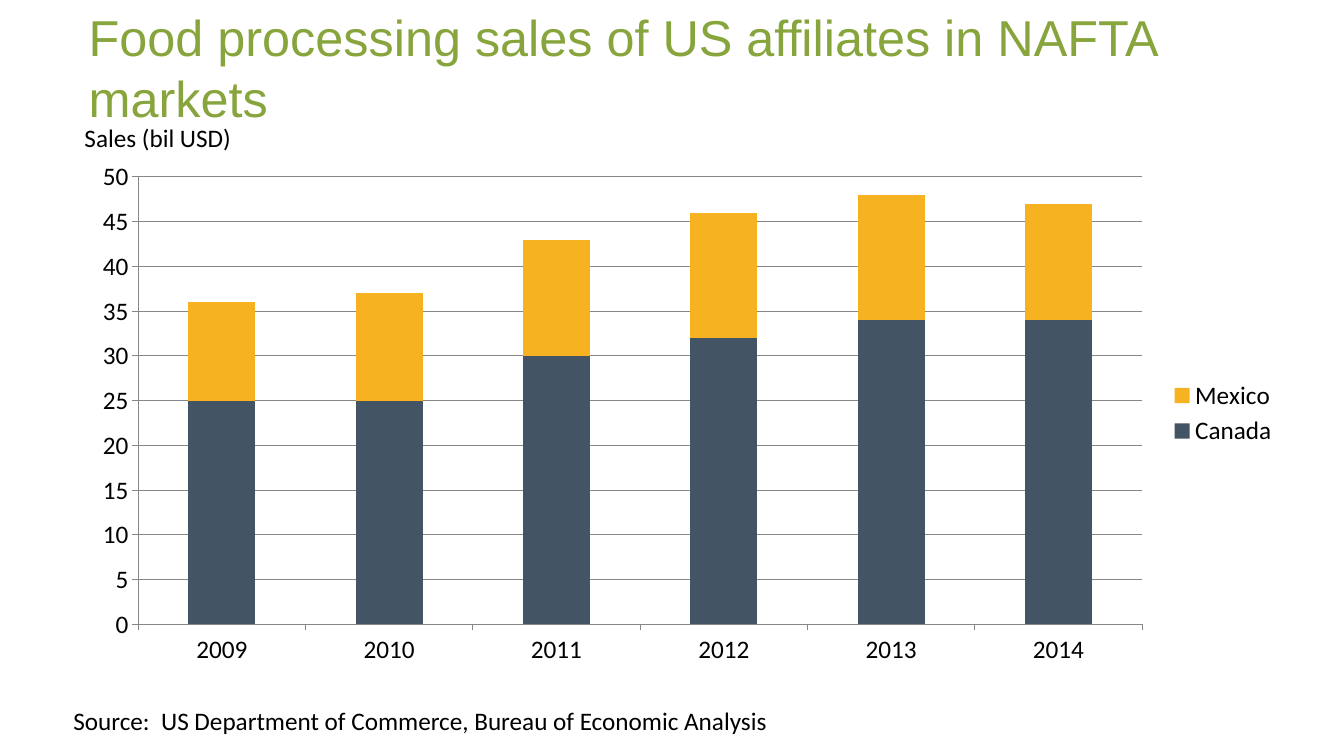
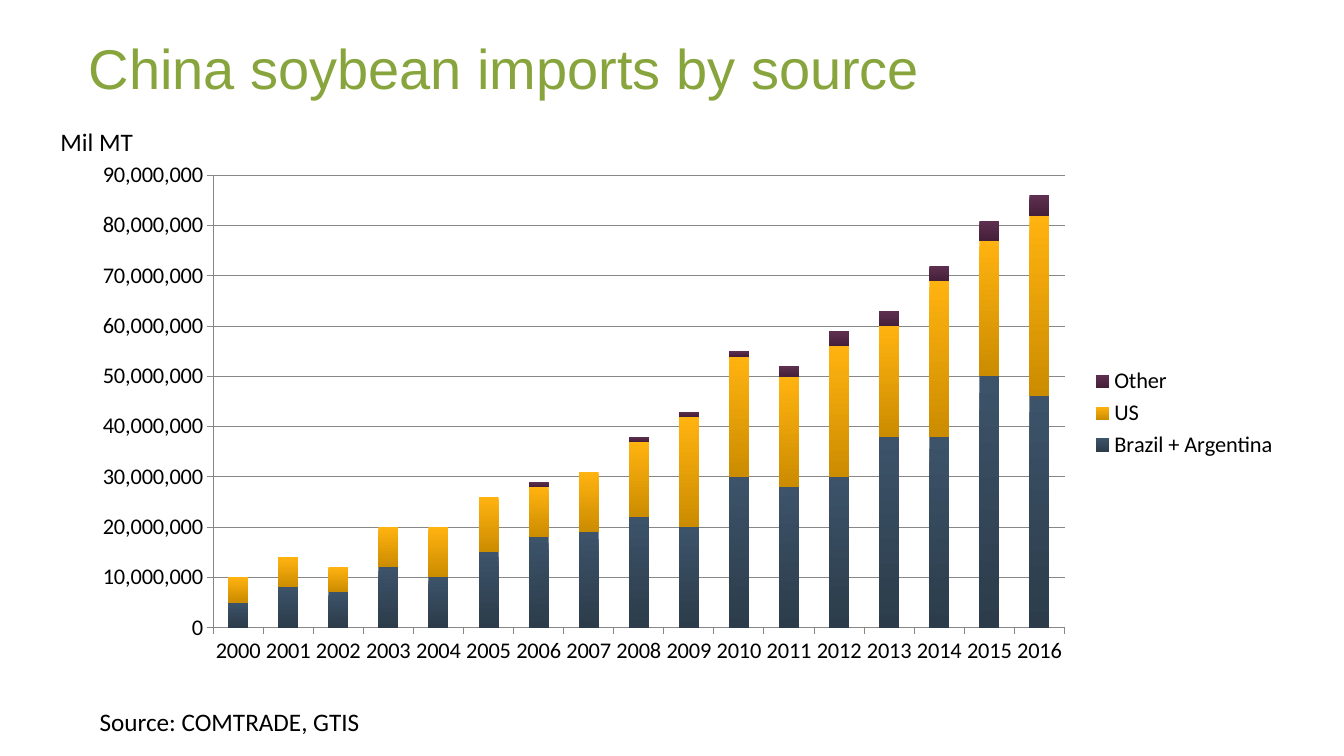
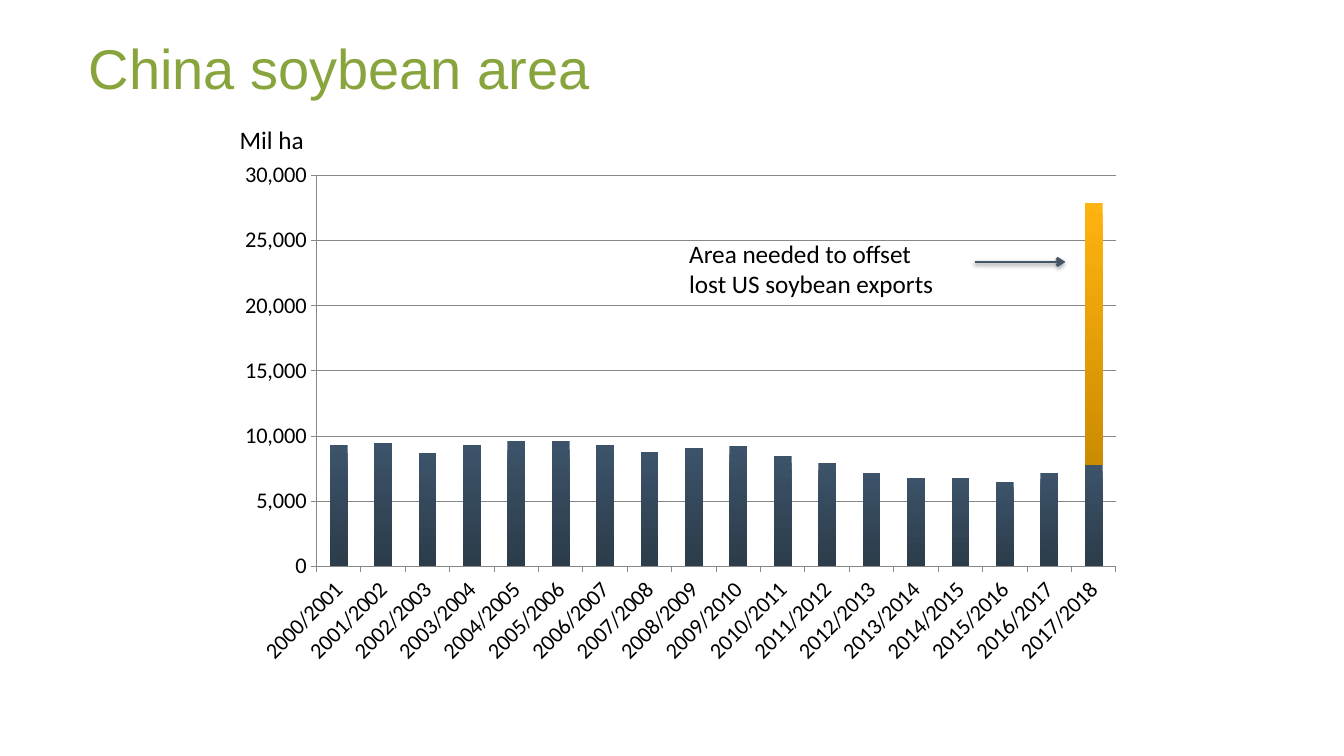
from lxml import etree
from pptx import Presentation
from pptx.chart.data import CategoryChartData
from pptx.dml.color import RGBColor
from pptx.enum.chart import XL_CHART_TYPE, XL_LEGEND_POSITION, XL_TICK_MARK
from pptx.enum.shapes import MSO_CONNECTOR
from pptx.enum.text import MSO_ANCHOR, MSO_AUTO_SIZE, PP_ALIGN
from pptx.oxml import parse_xml
from pptx.oxml.ns import nsdecls, qn
from pptx.util import Cm, Pt

STACKED = XL_CHART_TYPE.COLUMN_STACKED
LEGEND_RIGHT = XL_LEGEND_POSITION.RIGHT
TICK_OUT = XL_TICK_MARK.OUTSIDE
STRAIGHT = MSO_CONNECTOR.STRAIGHT
MIDDLE = MSO_ANCHOR.MIDDLE
LEFT = PP_ALIGN.LEFT
NO_FIT, GROW = MSO_AUTO_SIZE.NONE, MSO_AUTO_SIZE.SHAPE_TO_FIT_TEXT

COLOURS = {
    "title": "88A53D", "text": "000000", "grid": "878787",
    "slate": "435464", "amber": "F6B221",
    "slate top": "3C5369", "slate base": "2C3C4A",
    "amber top": "FFB310", "amber base": "CC8C00",
    "plum top": "5F2F50", "plum base": "45203A",
}
TITLE_AREA = (1.98, 0.48, 30.48, 2.41)
CHART_TOP, CHART_HEIGHT = 3.81, 13.21
LINE_HEIGHT = 1.02
LABEL_FONT = {"name": "Calibri", "size": Pt(18)}

SLIDES = [
    {
        "title": "Food processing sales of US affiliates in NAFTA markets",
        "title size": 36,
        "chart": {
            "left": 1.98, "width": 30.48, "size": 18, "legend": True,
            "categories": [str(year) for year in range(2009, 2015)],
            "unit": 1, "format": "General", "top": 50, "step": 5,
            "series": [
                ("Canada", ["slate"], [25, 25, 30, 32, 34, 34]),
                ("Mexico", ["amber"], [11, 12, 13, 14, 14, 13]),
            ],
        },
        "labels": [
            (1.6, 17.65, 18.21, ["Source:  US Department of Commerce, Bureau of Economic Analysis"]),
            (1.88, 2.95, 4.24, ["Sales (bil USD)"]),
        ],
    },
    {
        "title": "China soybean imports by source",
        "title size": 40,
        "chart": {
            "left": 1.98, "width": 30.48, "size": 16, "legend": True,
            "categories": [str(year) for year in range(2000, 2017)],
            "unit": 1000000, "format": "#,##0", "top": 90000000, "step": 10000000,
            "series": [
                ("Brazil + Argentina", ["slate top", "slate base"],
                 [5, 8, 7, 12, 10, 15, 18, 19, 22, 20, 30, 28, 30, 38, 38, 50, 46]),
                ("US", ["amber top", "amber base"],
                 [5, 6, 5, 8, 10, 11, 10, 12, 15, 22, 24, 22, 26, 22, 31, 27, 36]),
                ("Other", ["plum top", "plum base"],
                 [0, 0, 0, 0, 0, 0, 1, 0, 1, 1, 1, 2, 3, 3, 3, 4, 4]),
            ],
        },
        "labels": [
            (1.27, 3.07, 2.36, ["Mil MT"]),
            (2.26, 17.68, 7.14, ["Source: COMTRADE, GTIS"]),
        ],
    },
    {
        "title": "China soybean area",
        "title size": 40,
        "chart": {
            "left": 5.72, "width": 22.86, "size": 16, "legend": False, "rotation": -45,
            "categories": [f"{year}/{year + 1}" for year in range(2000, 2018)],
            "unit": 100, "format": "#,##0", "top": 30000, "step": 5000,
            "series": [
                ("Series 1", ["slate top", "slate base"],
                 [93, 95, 87, 93, 96, 96, 93, 88, 91, 92, 85, 79, 72, 68, 68, 65, 72, 78]),
                ("Series 2", ["amber top", "amber base"], [None] * 17 + [201]),
            ],
        },
        "labels": [
            (17.12, 5.87, 6.86, ["Area needed to offset", "lost US soybean exports"]),
            (5.79, 3.0, 2.13, ["Mil ha"]),
        ],
        "arrow": (24.56, 6.6, 26.85, 6.6),
    },
]


def rgb(name):
    return RGBColor.from_string(COLOURS[name])


def apply_font(font, values, colour="text"):
    for name, value in values.items():
        setattr(font, name, value)
    font.color.rgb = rgb(colour)


def set_title(page, text, size):
    box = page.shapes.title
    for name, value in zip(("left", "top", "width", "height"), TITLE_AREA):
        setattr(box, name, Cm(value))
    frame = box.text_frame
    frame.text = text
    for name, value in {"word_wrap": True, "auto_size": NO_FIT, "vertical_anchor": MIDDLE}.items():
        setattr(frame, name, value)
    para = frame.paragraphs[0]
    para.alignment = LEFT
    apply_font(para.font, {"name": "Arial", "size": Pt(size)}, "title")


def add_label(page, left, top, width, lines):
    height = LINE_HEIGHT + 0.78 * (len(lines) - 1)
    box = page.shapes.add_textbox(Cm(left), Cm(top), Cm(width), Cm(height))
    frame = box.text_frame
    frame.word_wrap = False
    frame.auto_size = GROW
    frame.text = "\n".join(lines)
    for para in frame.paragraphs:
        apply_font(para.font, LABEL_FONT)


def fill_series(fill, names):
    if len(names) == 1:
        fill.solid()
        fill.fore_color.rgb = rgb(names[0])
        return
    fill.gradient()
    fill.gradient_angle = 270
    for stop, name in zip(fill.gradient_stops, names):
        stop.color.rgb = rgb(name)


def add_stacked_chart(page, chart_info):
    data = CategoryChartData(number_format=chart_info["format"])
    data.categories = chart_info["categories"]
    for name, _, values in chart_info["series"]:
        data.add_series(name, [None if v is None else v * chart_info["unit"] for v in values])
    chart = page.shapes.add_chart(
        STACKED, Cm(chart_info["left"]), Cm(CHART_TOP),
        Cm(chart_info["width"]), Cm(CHART_HEIGHT), data).chart
    chart.has_title = False
    font = {"name": "Calibri", "size": Pt(chart_info["size"])}
    apply_font(chart.font, font)

    plot = chart.plots[0]
    for name, value in {"gap_width": 150, "overlap": 100, "vary_by_categories": False}.items():
        setattr(plot, name, value)
    for series, (_, colours, _) in zip(plot.series, chart_info["series"]):
        fill_series(series.format.fill, colours)

    values_axis, years_axis = chart.value_axis, chart.category_axis
    for axis in (values_axis, years_axis):
        axis.major_tick_mark = TICK_OUT
        axis.format.line.color.rgb = rgb("grid")
        axis.format.line.width = Pt(0.75)
        apply_font(axis.tick_labels.font, font)
    limits = {"minimum_scale": 0, "maximum_scale": chart_info["top"],
              "major_unit": chart_info["step"], "has_major_gridlines": True}
    for name, value in limits.items():
        setattr(values_axis, name, value)
    values_axis.tick_labels.number_format = chart_info["format"]
    values_axis.tick_labels.number_format_is_linked = False
    grid_line = values_axis.major_gridlines.format.line
    grid_line.color.rgb = rgb("grid")
    grid_line.width = Pt(0.75)
    if "rotation" in chart_info:
        body = years_axis._element.find(qn("c:txPr")).find(qn("a:bodyPr"))
        body.set("rot", str(chart_info["rotation"] * 60000))
        body.set("vert", "horz")

    chart.has_legend = chart_info["legend"]
    if chart.has_legend:
        chart.legend.position = LEGEND_RIGHT
        chart.legend.include_in_layout = False
        apply_font(chart.legend.font, font)


def add_arrow(page, ends):
    arrow = page.shapes.add_connector(STRAIGHT, *[Cm(value) for value in ends])
    arrow.line.color.rgb = rgb("slate")
    arrow.line.width = Pt(2)
    properties = arrow._element.spPr
    etree.SubElement(properties.find(qn("a:ln")), qn("a:tailEnd"), type="arrow")
    properties.append(parse_xml(
        f'<a:effectLst {nsdecls("a")}>'
        '<a:outerShdw blurRad="40000" dist="20000" dir="5400000" rotWithShape="0">'
        f'<a:srgbClr val="{COLOURS["text"]}"><a:alpha val="38000"/></a:srgbClr>'
        '</a:outerShdw></a:effectLst>'))


def main():
    deck = Presentation()
    deck.slide_width, deck.slide_height = Cm(33.87), Cm(19.05)
    title_only = deck.slide_layouts[5]
    for info in SLIDES:
        page = deck.slides.add_slide(title_only)
        set_title(page, info["title"], info["title size"])
        add_stacked_chart(page, info["chart"])
        for label in info["labels"]:
            add_label(page, *label)
        if "arrow" in info:
            add_arrow(page, info["arrow"])
    deck.save("out.pptx")


if __name__ == "__main__":
    main()
